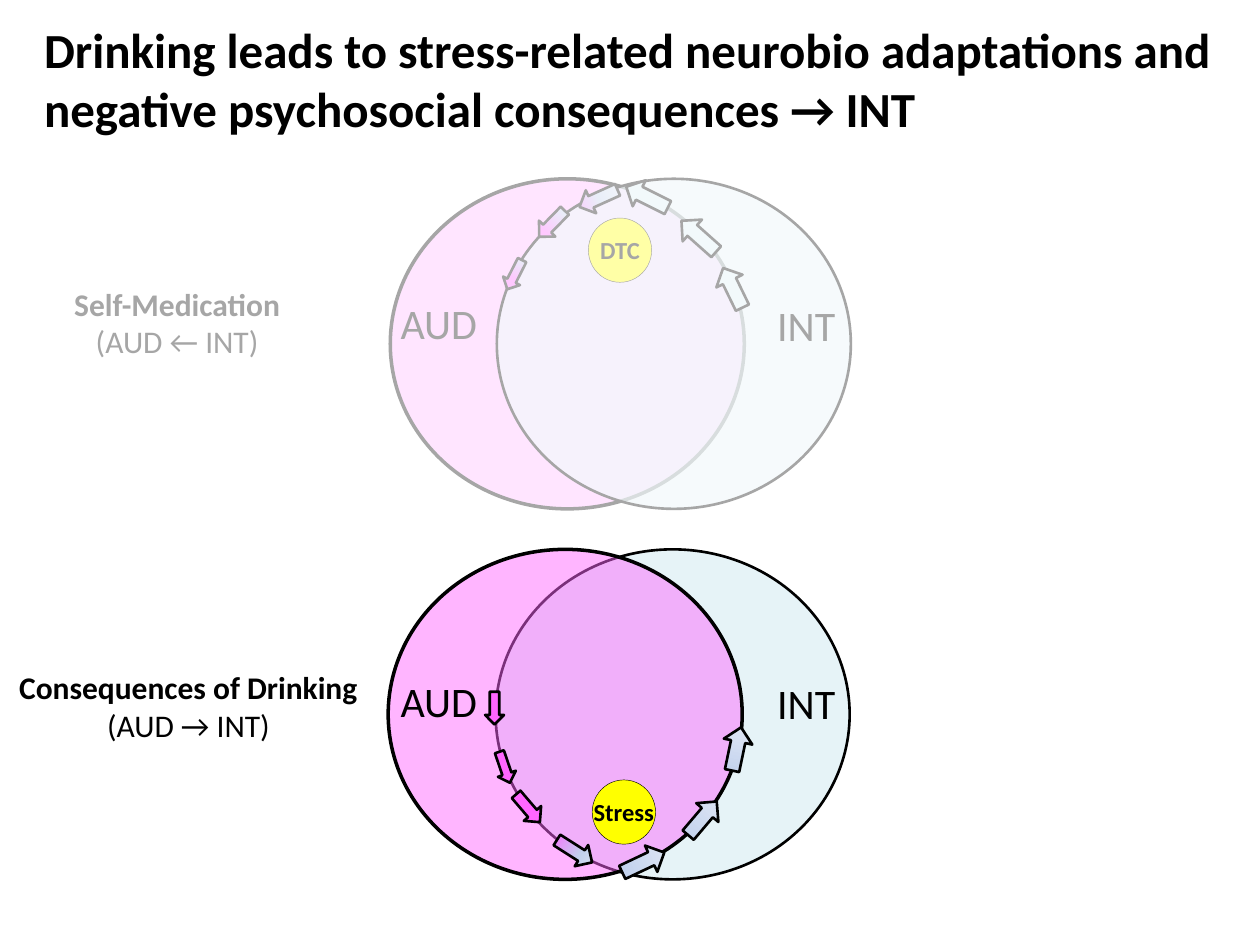
import copy
from dataclasses import dataclass

import pptx
import pptx.dml.color
import pptx.enum.shapes
import pptx.enum.text
import pptx.oxml
import pptx.oxml.ns
import pptx.util

Pt = pptx.util.Pt
SHAPE = pptx.enum.shapes.MSO_SHAPE
ALIGN = pptx.enum.text.PP_ALIGN
ANCHOR = pptx.enum.text.MSO_ANCHOR
AUTO_SIZE = pptx.enum.text.MSO_AUTO_SIZE

FONT = "Calibri"
BLACK, WHITE, YELLOW = "000000", "FFFFFF", "FFFF00"
PINK, PALE_BLUE = "FF66FF", "DBEEF4"
BLUE, LIGHT_BLUE = "C2D1ED", "E1E8F5"

Stops = list[tuple[int, str]]


@dataclass
class Circle:
    left: float
    top: float
    color: str
    opacity: int
    line_width: float


@dataclass
class Arrow:
    left: float
    top: float
    width: float
    height: float
    rotation: float
    fill: str | Stops


@dataclass
class Caption:
    text: str
    left: float
    top: float
    width: float
    height: float
    size: int = 24
    bold_first: bool = False
    align: ALIGN = ALIGN.LEFT
    wrap: bool = False


@dataclass
class Badge:
    text: str
    left: float
    top: float


def rgb(color: str):
    return pptx.dml.color.RGBColor.from_string(color)


def fill_solid(shape, color: str, opacity: int = 100) -> None:
    shape.fill.solid()
    shape.fill.fore_color.rgb = rgb(color)
    if opacity < 100:
        srgb = shape.fill._xPr.find(".//" + pptx.oxml.ns.qn("a:srgbClr"))
        alpha = pptx.oxml.parse_xml(
            f'<a:alpha {pptx.oxml.ns.nsdecls("a")} val="{opacity * 1000}"/>')
        srgb.append(alpha)


def fill_gradient(shape, stops: Stops) -> None:
    """Fill from top to bottom with three colour stops."""
    shape.fill.gradient()
    shape.fill.gradient_angle = 270
    stop_list = shape.fill._xPr.find(".//" + pptx.oxml.ns.qn("a:gsLst"))
    stop_list.append(copy.deepcopy(stop_list[-1]))
    for stop, (position, color) in zip(shape.fill.gradient_stops, stops):
        stop.position = position / 100
        stop.color.rgb = rgb(color)


def add_outlined(slide, kind, left, top, width, height, line_width: float):
    shape = slide.shapes.add_shape(kind, Pt(left), Pt(top), Pt(width), Pt(height))
    shape.shadow.inherit = False
    if line_width:
        shape.line.color.rgb = rgb(BLACK)
        shape.line.width = Pt(line_width)
    else:
        shape.line.fill.background()
    return shape


def format_paragraph(paragraph, size: int, bold: bool, align: ALIGN) -> None:
    paragraph.alignment = align
    for run in paragraph.runs:
        run.font.name = FONT
        run.font.size = Pt(size)
        run.font.bold = bold
        run.font.color.rgb = rgb(BLACK)


def add_circle(slide, circle: Circle) -> None:
    shape = add_outlined(slide, SHAPE.OVAL, circle.left, circle.top,
                         202.3, 188.6, circle.line_width)
    fill_solid(shape, circle.color, circle.opacity)


def add_arrow(slide, arrow: Arrow) -> None:
    shape = add_outlined(slide, SHAPE.DOWN_ARROW, arrow.left, arrow.top,
                         arrow.width, arrow.height, 1.5)
    shape.rotation = arrow.rotation
    if isinstance(arrow.fill, str):
        fill_solid(shape, arrow.fill)
    else:
        fill_gradient(shape, arrow.fill)


def add_caption(slide, caption: Caption) -> None:
    box = slide.shapes.add_textbox(Pt(caption.left), Pt(caption.top),
                                   Pt(caption.width), Pt(caption.height))
    frame = box.text_frame
    frame.word_wrap = caption.wrap
    frame.auto_size = AUTO_SIZE.SHAPE_TO_FIT_TEXT
    frame.text = caption.text
    for index, paragraph in enumerate(frame.paragraphs):
        format_paragraph(paragraph, caption.size,
                         caption.bold_first and index == 0, caption.align)


def add_badge(slide, badge: Badge) -> None:
    shape = add_outlined(slide, SHAPE.OVAL, badge.left, badge.top, 36.2, 36.7, 0.25)
    fill_solid(shape, YELLOW)
    frame = shape.text_frame
    frame.margin_left = frame.margin_right = frame.margin_top = frame.margin_bottom = 0
    frame.word_wrap = False
    frame.vertical_anchor = ANCHOR.MIDDLE
    frame.text = badge.text
    format_paragraph(frame.paragraphs[0], 14, True, ALIGN.CENTER)


def set_title(slide, text: str) -> None:
    title = slide.shapes.title
    title.left, title.top, title.width, title.height = Pt(18), Pt(0), Pt(684), Pt(90)
    frame = title.text_frame
    frame.text = text
    frame.word_wrap = True
    frame.auto_size = AUTO_SIZE.NONE
    frame.vertical_anchor = ANCHOR.MIDDLE
    format_paragraph(frame.paragraphs[0], 28, True, ALIGN.LEFT)


CONSEQUENCES = [
    Circle(283.2, 313.9, PALE_BLUE, 67, 1.5),
    Circle(221.8, 313.9, PINK, 48, 2),
    Arrow(393.1, 455, 16.6, 25.2, 220.3, [(0, PINK), (8, BLUE), (100, LIGHT_BLUE)]),
    Arrow(412.6, 415.4, 16.6, 25.2, 191.8, [(0, PINK), (1, BLUE), (100, LIGHT_BLUE)]),
    Arrow(359.3, 479.5, 16.6, 26.6, 244.7, [(0, PINK), (18, BLUE), (100, LIGHT_BLUE)]),
    Arrow(321.1, 474.5, 14.4, 23.8, 302.5, [(0, PINK), (60, BLUE), (100, LIGHT_BLUE)]),
    Arrow(295.2, 451.4, 13, 20.9, 319.5, PINK),
    Arrow(283, 429.1, 10.8, 18.7, 341.3, PINK),
    Arrow(277.2, 395.3, 10.8, 18.7, 0, PINK),
    Caption("INT", 437, 383.8, 49, 36),
    Caption("AUD", 221.8, 382.3, 59.8, 36),
    Caption("Consequences of Drinking\n(AUD → INT)", -12.2, 378, 239.8, 51,
            18, True, ALIGN.CENTER, True),
    Badge("Stress", 338.4, 445.7),
]
SELF_MEDICATION = [
    Caption("Self-Medication\n(AUD ← INT)", 34.6, 159.1, 133.2, 51,
            18, True, ALIGN.CENTER),
    Circle(223, 102.2, PINK, 48, 2),
    Circle(283.9, 102.2, PALE_BLUE, 67, 1.5),
    Caption("INT", 437, 167.8, 49, 36),
    Caption("AUD", 221.8, 166.3, 59.8, 36),
    Arrow(334.8, 101.5, 14.4, 23.8, 65.7, [(0, LIGHT_BLUE), (50, BLUE), (100, PINK)]),
    Arrow(308.9, 117.4, 13, 20.9, 44.4, [(0, LIGHT_BLUE), (22, BLUE), (68, PINK)]),
    Arrow(288.7, 147.6, 10.8, 18.7, 26.9, [(0, LIGHT_BLUE), (15, BLUE), (58, PINK)]),
    Arrow(391, 121.7, 16.6, 26.6, 131.7, PALE_BLUE),
    Arrow(361.4, 99.4, 16.6, 26.6, 116.6, PALE_BLUE),
    Arrow(410.4, 151.9, 16.6, 25.2, 154.1, PALE_BLUE),
    Badge("DTC", 336.2, 124.6),
]
DRAW = {Circle: add_circle, Arrow: add_arrow, Caption: add_caption, Badge: add_badge}


def main() -> None:
    deck = pptx.Presentation()
    deck.slide_width, deck.slide_height = Pt(720), Pt(540)
    slide = deck.slides.add_slide(deck.slide_layouts[5])
    set_title(slide, "Drinking leads to stress-related neurobio adaptations and "
                     "negative psychosocial consequences → INT")
    for element in CONSEQUENCES + SELF_MEDICATION:
        DRAW[type(element)](slide, element)
    veil = add_outlined(slide, SHAPE.RECTANGLE, 24, 90, 672, 222, 0)
    fill_solid(veil, WHITE, 65)
    deck.save("out.pptx")


if __name__ == "__main__":
    main()
